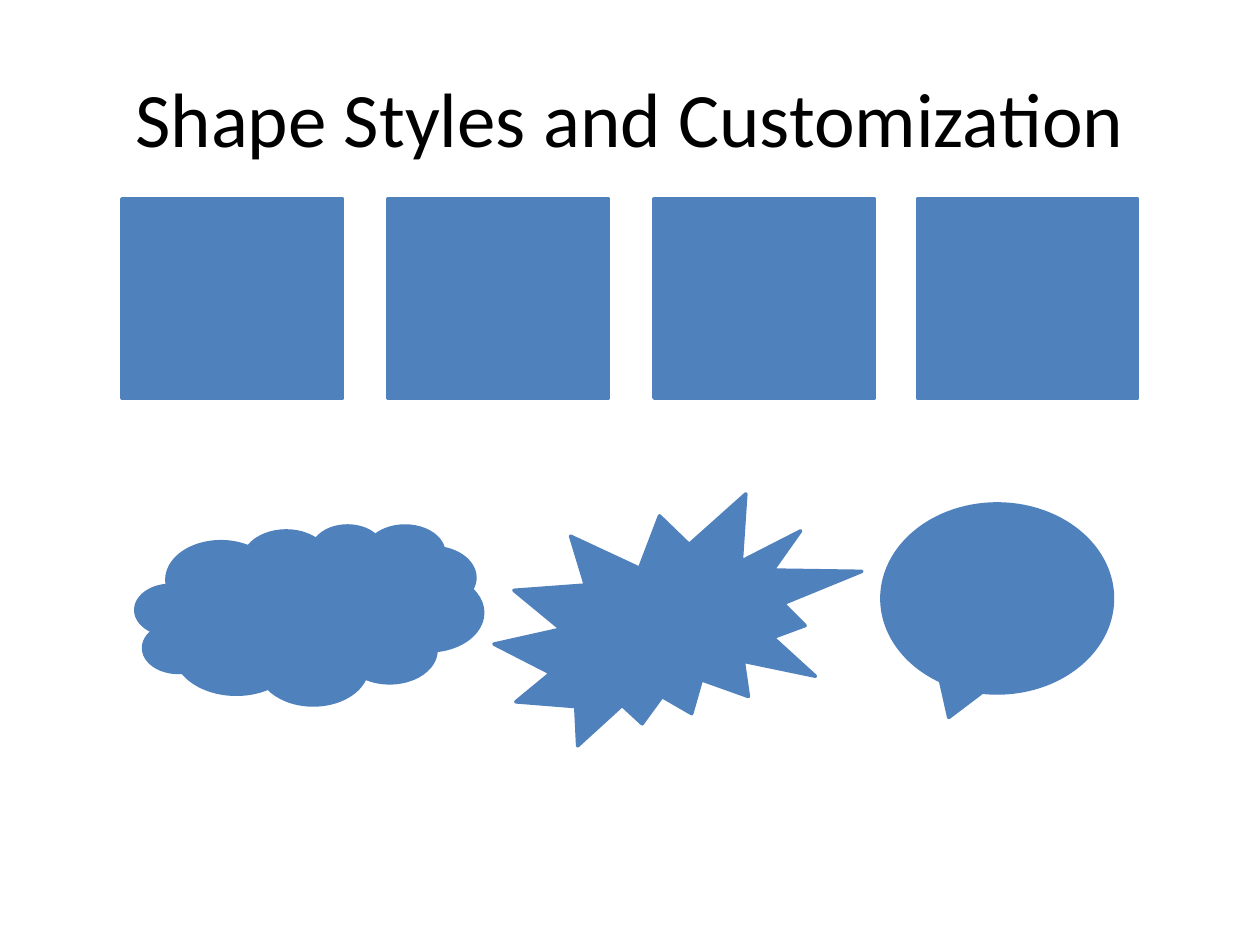
from pptx import Presentation
from pptx.dml.color import RGBColor
from pptx.enum.shapes import MSO_SHAPE
from pptx.enum.text import MSO_ANCHOR, PP_ALIGN
from pptx.util import Inches, Pt

RECTANGLE = MSO_SHAPE.RECTANGLE
CLOUD = MSO_SHAPE.CLOUD
EXPLOSION = MSO_SHAPE.EXPLOSION2
CALLOUT = MSO_SHAPE.OVAL_CALLOUT
MIDDLE = MSO_ANCHOR.MIDDLE
CENTER = PP_ALIGN.CENTER

BLUE = RGBColor(0x4F, 0x81, 0xBD)
BLACK = RGBColor(0, 0, 0)

deck = Presentation()
deck.slide_width = Inches(10)
deck.slide_height = Inches(7.5)
page = deck.slides.add_slide(deck.slide_layouts[6])


def add_text(text, left, top, width, height, *, size, color, font="Calibri"):
    box = page.shapes.add_textbox(
        Inches(left), Inches(top), Inches(width), Inches(height))
    frame = box.text_frame
    frame.word_wrap = True
    frame.vertical_anchor = MIDDLE
    para = frame.paragraphs[0]
    para.alignment = CENTER
    span = para.add_run()
    span.text = text
    span.font.name = font
    span.font.size = Pt(size)
    span.font.color.rgb = color


def add_blue_shape(kind, left, top, width, height):
    shape = page.shapes.add_shape(
        kind, Inches(left), Inches(top), Inches(width), Inches(height))
    shape.shadow.inherit = False
    shape.fill.solid()
    shape.fill.fore_color.rgb = BLUE
    shape.line.color.rgb = BLUE
    shape.line.width = Pt(2)
    return shape


# Title
add_text("Shape Styles and Customization", 0.5, 0.3, 9, 1.25,
         size=44, color=BLACK)

# Row of rectangles
for left in (0.97, 3.08, 5.19, 7.28):
    add_blue_shape(RECTANGLE, left, 1.58, 1.75, 1.58)

# Cloud, explosion and speech bubble
add_blue_shape(CLOUD, 1.08, 4.17, 2.75, 1.42)
add_blue_shape(EXPLOSION, 3.92, 3.92, 2.92, 2)
bubble = add_blue_shape(CALLOUT, 7, 4, 1.83, 1.5)
bubble.adjustments[0] = -0.21
bubble.adjustments[1] = 0.63

deck.save("out.pptx")
